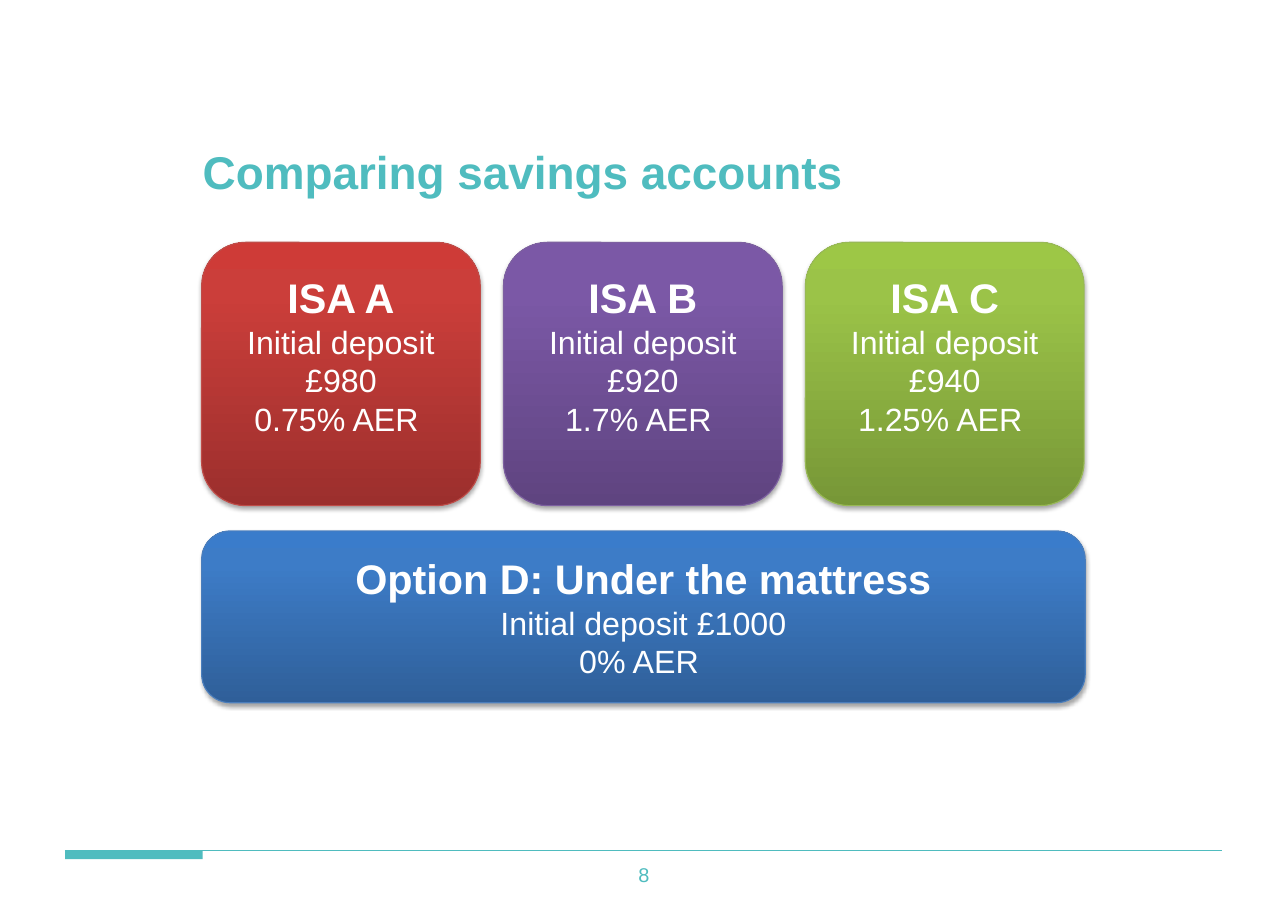
from copy import deepcopy
from dataclasses import dataclass

from lxml import etree
from pptx import Presentation
from pptx.dml.color import RGBColor
from pptx.enum.shapes import MSO_CONNECTOR, MSO_SHAPE
from pptx.enum.text import MSO_ANCHOR, PP_ALIGN
from pptx.oxml import parse_xml
from pptx.oxml.ns import nsdecls, qn
from pptx.util import Inches, Pt

STRAIGHT = MSO_CONNECTOR.STRAIGHT
RECTANGLE = MSO_SHAPE.RECTANGLE
ROUNDED = MSO_SHAPE.ROUNDED_RECTANGLE
TOP, MIDDLE = MSO_ANCHOR.TOP, MSO_ANCHOR.MIDDLE
LEFT, CENTER = PP_ALIGN.LEFT, PP_ALIGN.CENTER

TEAL = RGBColor(0x4F, 0xBC, 0xBF)
WHITE = RGBColor(0xFF, 0xFF, 0xFF)
RED = (RGBColor(0x9C, 0x2F, 0x2D), RGBColor(0xCB, 0x3E, 0x3A), RGBColor(0xCE, 0x3B, 0x37))
PURPLE = (RGBColor(0x5F, 0x44, 0x80), RGBColor(0x7B, 0x58, 0xA6), RGBColor(0x7C, 0x57, 0xA8))
GREEN = (RGBColor(0x77, 0x97, 0x37), RGBColor(0x9B, 0xC3, 0x48), RGBColor(0x9D, 0xC7, 0x46))
BLUE = (RGBColor(0x2F, 0x5F, 0x99), RGBColor(0x3D, 0x7C, 0xC7), RGBColor(0x3A, 0x7C, 0xCB))
RED_EDGE = RGBColor(0xBF, 0x4C, 0x48)
PURPLE_EDGE = RGBColor(0x7D, 0x60, 0xA0)
GREEN_EDGE = RGBColor(0x98, 0xB9, 0x55)
BLUE_EDGE = RGBColor(0x4B, 0x7E, 0xBC)

GRADIENT_POSITIONS = (0, 0.8, 1)
CARD_LEFT, CARD_TOP, CARD_WIDTH, CARD_HEIGHT = 1.83, 2.2, 2.53, 2.39
CARD_PITCH = 2.74
OPTION_TOP, OPTION_WIDTH, OPTION_HEIGHT = 4.82, 8.02, 1.56
FOOTER_TOP = 7.72

HEADING = {"size": Pt(27), "bold": True}
DETAIL = {"size": Pt(21), "bold": False}
TITLE = {"size": Pt(30), "bold": True}
PAGE_NUMBER = {"size": Pt(13), "bold": False}

SHADOW = (
    f'<a:outerShdw {nsdecls("a")} blurRad="{Pt(3.1)}" dist="{Pt(1.8)}" dir="5400000" '
    'rotWithShape="0"><a:srgbClr val="000000"><a:alpha val="35000"/></a:srgbClr></a:outerShdw>'
)


@dataclass
class Account:
    name: str
    deposit: str
    rate: str
    gradient: tuple
    edge: RGBColor


ISAS = [
    Account("ISA A", "£980", "0.75% AER ", RED, RED_EDGE),
    Account("ISA B", "£920", "1.7% AER ", PURPLE, PURPLE_EDGE),
    Account("ISA C", "£940", "1.25% AER ", GREEN, GREEN_EDGE),
]
MATTRESS = Account("Option D: Under the mattress", "£1000", "0% AER ", BLUE, BLUE_EDGE)


def write_lines(frame, lines: list, color: RGBColor, align, anchor, insets: tuple) -> None:
    """Fill a text frame; insets run left, top, right, bottom in inches."""
    left, top, right, bottom = map(Inches, insets)
    frame_format = {
        "word_wrap": True, "vertical_anchor": anchor,
        "margin_left": left, "margin_top": top,
        "margin_right": right, "margin_bottom": bottom,
    }
    for key, value in frame_format.items():
        setattr(frame, key, value)
    for index, (text, font_format) in enumerate(lines):
        paragraph = frame.add_paragraph() if index else frame.paragraphs[0]
        paragraph.alignment = align
        run = paragraph.add_run()
        run.text = text
        run.font.color.rgb = color
        for key, value in {"name": "Arial", **font_format}.items():
            setattr(run.font, key, value)


def fill_gradient(shape, colors: tuple) -> None:
    """Fill upwards from the darkest colour at the bottom edge."""
    shape.fill.gradient()
    shape.fill.gradient_angle = 90
    stop_list = shape.element.spPr.find(".//" + qn("a:gsLst"))
    stop_list.append(deepcopy(stop_list[-1]))
    for stop, color, position in zip(shape.fill.gradient_stops, colors, GRADIENT_POSITIONS):
        stop.color.rgb = color
        stop.position = position


def add_account(slide, account: Account, box: tuple, bottom_inset: float) -> None:
    card = slide.shapes.add_shape(ROUNDED, *map(Inches, box))
    fill_gradient(card, account.gradient)
    card.line.color.rgb = account.edge
    card.line.width = Pt(0.75)
    card.shadow.inherit = False
    card.element.spPr.find(qn("a:effectLst")).append(parse_xml(SHADOW))
    lines = [
        (account.name, HEADING),
        (f"Initial deposit {account.deposit}", DETAIL),
        (account.rate, DETAIL),
    ]
    write_lines(card.text_frame, lines, WHITE, CENTER, MIDDLE, (0.11, 0.06, 0.11, bottom_inset))


def add_footer(slide) -> None:
    rule = slide.shapes.add_connector(
        STRAIGHT, *map(Inches, (0.59, FOOTER_TOP, 11.09, FOOTER_TOP)))
    rule.line.color.rgb = TEAL
    rule.line.width = Pt(1)
    etree.SubElement(rule.element.spPr, qn("a:effectLst"))

    accent = slide.shapes.add_shape(RECTANGLE, *map(Inches, (0.59, FOOTER_TOP, 1.25, 0.08)))
    accent.fill.solid()
    accent.fill.fore_color.rgb = TEAL
    accent.line.fill.background()
    accent.shadow.inherit = False

    number = slide.shapes.add_textbox(*map(Inches, (4.48, FOOTER_TOP, 2.73, 0.44)))
    write_lines(number.text_frame, [("8", PAGE_NUMBER)], TEAL, CENTER, MIDDLE,
                (0.1, 0.05, 0.1, 0.05))


def main() -> None:
    deck = Presentation()
    deck.slide_width, deck.slide_height = Inches(11.69), Inches(8.27)
    slide = deck.slides.add_slide(deck.slide_layouts[6])

    title = slide.shapes.add_textbox(*map(Inches, (1.84, 1.3, 8, 0.64)))
    write_lines(title.text_frame, [("Comparing savings accounts", TITLE)], TEAL, LEFT, TOP,
                (0, 0, 0, 0))

    for column, isa in enumerate(ISAS):
        left = CARD_LEFT + column * CARD_PITCH
        add_account(slide, isa, (left, CARD_TOP, CARD_WIDTH, CARD_HEIGHT), bottom_inset=0.4)
    add_account(slide, MATTRESS, (CARD_LEFT, OPTION_TOP, OPTION_WIDTH, OPTION_HEIGHT),
                bottom_inset=0.06)
    add_footer(slide)
    deck.save("out.pptx")


if __name__ == "__main__":
    main()
